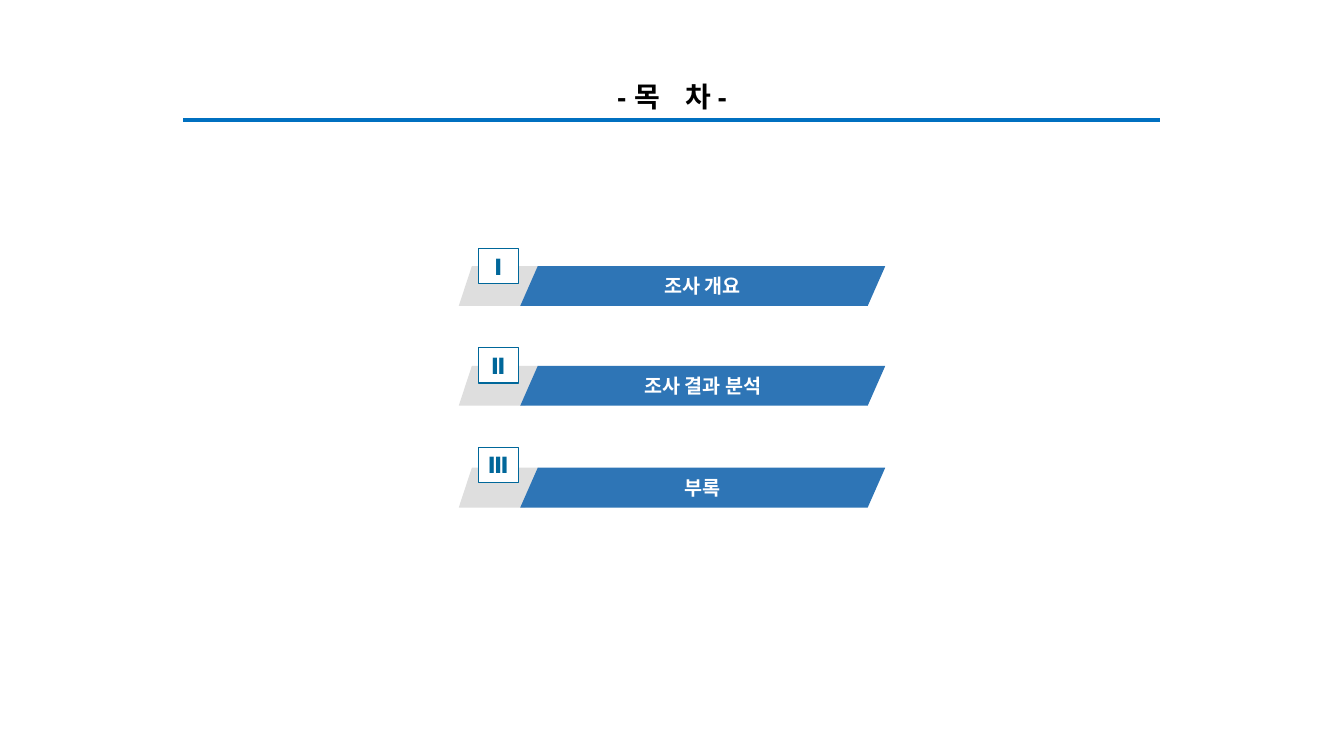
"""Build the table-of-contents slide with its title, rule and three chapter bars."""
from dataclasses import dataclass

from lxml.etree import SubElement
from pptx import Presentation
from pptx.dml.color import RGBColor
from pptx.enum.shapes import MSO_CONNECTOR, MSO_SHAPE
from pptx.enum.text import MSO_ANCHOR, PP_ALIGN
from pptx.oxml.ns import qn
from pptx.shapes.autoshape import Shape
from pptx.shapes.shapetree import GroupShapes
from pptx.slide import Slide
from pptx.text.text import TextFrame
from pptx.util import Inches, Pt

COLORS = {
    "title": "000000",
    "rule": "0070C0",
    "tab": "DEDEDE",
    "badge": "FFFFFF",
    "numeral": "00679A",
    "bar": "2E75B6",
    "heading": "FFFFFF",
}
FONT = "Arial"
SLIDE_WIDTH, SLIDE_HEIGHT = Inches(13.33), Inches(7.5)
COLUMNS, ROWS = 1333, 750
BAR_HEIGHT = 39.5
BADGE_TOP, BADGE_PITCH = 246.5, 98.5


@dataclass(frozen=True)
class Area:
    """Place on the slide grid."""
    column: float
    row: float
    width: float
    height: float

    def box(self) -> tuple[int, int, int, int]:
        """Return left, top, width and height as slide lengths."""
        return (
            round(SLIDE_WIDTH * self.column / COLUMNS),
            round(SLIDE_HEIGHT * self.row / ROWS),
            round(SLIDE_WIDTH * self.width / COLUMNS),
            round(SLIDE_HEIGHT * self.height / ROWS),
        )


@dataclass(frozen=True)
class Chapter:
    """One entry of the contents."""
    numeral: str
    heading: str
    bar_row: float


CHAPTERS = (
    Chapter("Ⅰ", "조사 개요", 264),
    Chapter("Ⅱ", "조사 결과 분석", 363),
    Chapter("Ⅲ", "부록", 464),
)
TITLE_AREA = Area(182, 74, 969, 44)
RULE_AREA = Area(182, 119, 969, 0)


def color(part: str) -> RGBColor:
    """Return the colour of a named part."""
    return RGBColor.from_string(COLORS[part])


def write(frame: TextFrame, text: str, size: float, part: str) -> None:
    """Write one bold centred line in the middle of a frame."""
    frame.vertical_anchor = MSO_ANCHOR.MIDDLE
    paragraph = frame.paragraphs[0]
    paragraph.alignment = PP_ALIGN.CENTER
    run = paragraph.add_run()
    run.text = text
    run.font.name = FONT
    run.font.size = Pt(size)
    run.font.bold = True
    run.font.color.rgb = color(part)


def add_block(shapes: GroupShapes, kind: MSO_SHAPE, area: Area, part: str) -> Shape:
    """Add a filled shape without outline or shadow."""
    block = shapes.add_shape(kind, *area.box())
    block.shadow.inherit = False
    block.fill.solid()
    block.fill.fore_color.rgb = color(part)
    block.line.fill.background()
    return block


def add_title(slide: Slide) -> None:
    """Place the title and the rule below it."""
    title = slide.shapes.title
    title.left, title.top, title.width, title.height = TITLE_AREA.box()
    write(title.text_frame, "- 목    차 -", 20, "title")
    left, top, width, height = RULE_AREA.box()
    rule = slide.shapes.add_connector(
        MSO_CONNECTOR.STRAIGHT, left, top, left + width, top + height)
    rule.line.color.rgb = color("rule")
    rule.line.width = Pt(2.75)
    SubElement(rule.element.spPr, qn("a:effectLst"))


def add_chapter(slide: Slide, index: int, chapter: Chapter) -> None:
    """Draw the tab, numeral badge and bar of one chapter as a group."""
    shapes = slide.shapes.add_group_shape().shapes
    tab = add_block(shapes, MSO_SHAPE.PARALLELOGRAM,
                    Area(455, chapter.bar_row, 79, BAR_HEIGHT), "tab")
    tab.adjustments[0] = 0.33

    badge_row = BADGE_TOP + index * BADGE_PITCH
    badge = add_block(shapes, MSO_SHAPE.RECTANGLE,
                      Area(474.5, badge_row, 39.5, 35), "badge")
    badge.line.color.rgb = color("numeral")
    badge.line.width = Pt(0.75)
    frame = badge.text_frame
    frame.margin_left = frame.margin_right = Inches(0.02)
    frame.margin_top = frame.margin_bottom = Inches(0.04)
    write(frame, chapter.numeral, 16, "numeral")

    bar = add_block(shapes, MSO_SHAPE.PARALLELOGRAM,
                    Area(516, chapter.bar_row, 362, BAR_HEIGHT), "bar")
    bar.adjustments[0] = 0.44
    bar.text_frame.word_wrap = False
    write(bar.text_frame, chapter.heading, 14, "heading")


def main() -> None:
    """Create and save the slide."""
    presentation = Presentation()
    presentation.slide_width = SLIDE_WIDTH
    presentation.slide_height = SLIDE_HEIGHT
    slide = presentation.slides.add_slide(presentation.slide_layouts[5])
    add_title(slide)
    for index, chapter in enumerate(CHAPTERS):
        add_chapter(slide, index, chapter)
    presentation.save("out.pptx")


if __name__ == "__main__":
    main()
